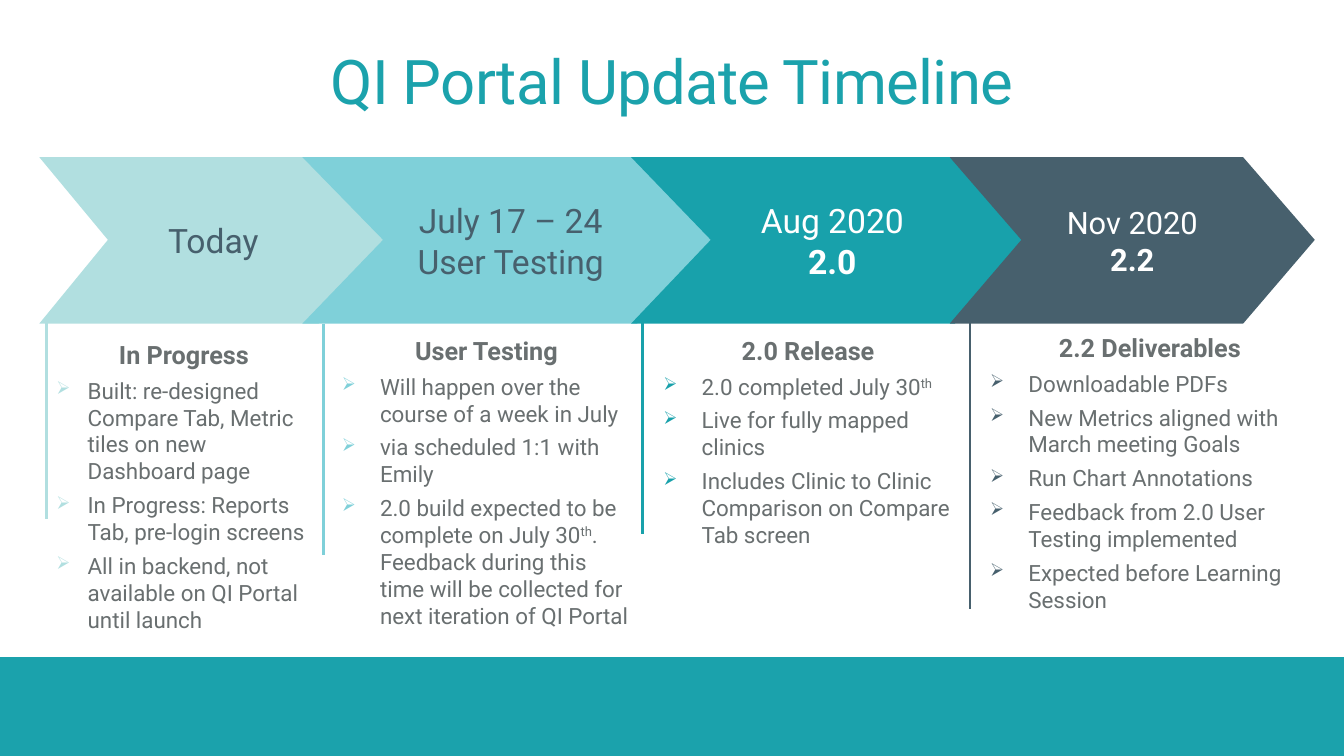
from lxml import etree
from pptx import Presentation
from pptx.dml.color import RGBColor
from pptx.enum.shapes import MSO_CONNECTOR, MSO_SHAPE
from pptx.enum.text import MSO_ANCHOR as ANCHOR, MSO_AUTO_SIZE as AUTO, PP_ALIGN as ALIGN
from pptx.oxml.ns import qn
from pptx.util import Inches, Pt

FONT = "Roboto"
COLORS = {
    "title": "1BA2AC", "body": "696F70", "white": "FFFFFF", "slate": "47606D",
    "mint": "B1DFE0", "aqua": "7FD0D9", "teal": "18A1AB",
}
TOP, MIDDLE, BOTTOM = 1.56, 2.38, 3.21  # arrow band

# Arrow: left, shoulder, tip, notch; rule: x, top, bottom; notes: left, top, width, height
# Text between ^ marks is superscript
STAGES = [
    {"color": "mint", "ink": "slate", "size": 24, "label": ["Today"],
     "arrow": (0.39, 3.16, 3.84, 1.07), "rule": (0.46, 3.18, 5.15),
     "box": (0.51, 3.32, 2.63, 3.41), "indent": 0.31, "head": "In Progress",
     "notes": ["Built: re-designed Compare Tab, Metric tiles on new Dashboard page",
               "In Progress: Reports Tab, pre-login screens",
               "All in backend, not available on QI Portal until launch"]},
    {"color": "aqua", "ink": "slate", "size": 24, "label": ["July 17 – 24", "User Testing"],
     "arrow": (3, 6.32, 7.13, 3.8), "rule": (3.21, 3.21, 5.51),
     "box": (3.34, 3.28, 2.97, 3.41), "indent": 0.38, "head": "User Testing",
     "notes": ["Will happen over the course of a week in July",
               "via scheduled 1:1 with Emily",
               "2.0 build expected to be complete on July 30^th^. Feedback during this "
               "time will be collected for next iteration of QI Portal"]},
    {"color": "teal", "ink": "white", "size": 24, "label": ["Aug 2020", "2.0"],
     "arrow": (6.26, 9.47, 10.25, 7.05), "rule": (6.37, 3.18, 5.3),
     "box": (6.53, 3.28, 2.97, 2.33), "indent": 0.38, "head": "2.0 Release",
     "notes": ["2.0 completed July 30^th^",
               "Live for fully mapped clinics",
               "Includes Clinic to Clinic Comparison on Compare Tab screen"]},
    {"color": "slate", "ink": "white", "size": 22, "label": ["Nov 2020", "2.2"],
     "arrow": (9.42, 12.33, 13.04, 10.13), "rule": (9.62, 3.18, 6.04),
     "box": (9.77, 3.25, 3.27, 3.62), "indent": 0.38, "head": "2.2 Deliverables",
     "notes": ["Downloadable PDFs",
               "New Metrics aligned with March meeting Goals",
               "Run Chart Annotations",
               "Feedback from 2.0 User Testing implemented",
               "Expected before Learning Session"]},
]


def add_run(p, text, size, color, bold=False):
    r = p.add_run()
    r.text = text
    r.font.name, r.font.size, r.font.bold = FONT, Pt(size), bold
    r.font.color.rgb = RGBColor.from_string(COLORS[color])
    return r


def fit_frame(tf):
    tf.word_wrap = True
    tf.auto_size = AUTO.SHAPE_TO_FIT_TEXT
    tf.vertical_anchor = ANCHOR.TOP
    tf.margin_left = tf.margin_right = tf.margin_top = tf.margin_bottom = Inches(0.05)


prs = Presentation()
prs.slide_width, prs.slide_height = Inches(13.33), Inches(7.5)
s = prs.slides.add_slide(prs.slide_layouts[5])

# Footer band
footer = s.shapes.add_shape(MSO_SHAPE.RECTANGLE, 0, Inches(6.52), prs.slide_width, Inches(0.98))
footer.shadow.inherit = False
footer.fill.solid()
footer.fill.fore_color.rgb = RGBColor.from_string(COLORS["title"])
footer.line.fill.background()

# Title
title = s.shapes.title
title.left, title.top, title.width, title.height = map(Inches, (2.57, 0.38, 8.19, 0.84))
fit_frame(title.text_frame)
p = title.text_frame.paragraphs[0]
p.alignment = ALIGN.CENTER
r = add_run(p, "QI Portal Update Timeline", 44, "title")
r._r.get_or_add_rPr().set("spc", "-50")

for stage in STAGES:
    color = RGBColor.from_string(COLORS[stage["color"]])

    # Arrow with its label
    left, shoulder, tip, notch = stage["arrow"]
    builder = s.shapes.build_freeform(Inches(left), Inches(TOP), scale=1.0)
    corners = [(shoulder, TOP), (tip, MIDDLE), (shoulder, BOTTOM), (left, BOTTOM), (notch, MIDDLE)]
    builder.add_line_segments([(Inches(x), Inches(y)) for x, y in corners], close=True)
    sp = builder.convert_to_shape()
    sp.shadow.inherit = False
    sp.fill.solid()
    sp.fill.fore_color.rgb = color
    sp.line.fill.background()
    tf = sp.text_frame
    tf.word_wrap = True
    tf.vertical_anchor = ANCHOR.MIDDLE
    for i, text in enumerate(stage["label"]):
        p = tf.add_paragraph() if i else tf.paragraphs[0]
        p.alignment = ALIGN.CENTER
        add_run(p, text, stage["size"], stage["ink"], bold=text.startswith("2."))

    # Vertical rule
    x, y1, y2 = map(Inches, stage["rule"])
    rule = s.shapes.add_connector(MSO_CONNECTOR.STRAIGHT, x, y1, x, y2)
    rule.line.color.rgb = color
    rule.line.width = Pt(2)
    etree.SubElement(rule._element.spPr, qn("a:effectLst"))

    # Heading and bulleted notes
    tf = s.shapes.add_textbox(*map(Inches, stage["box"])).text_frame
    fit_frame(tf)
    p = tf.paragraphs[0]
    p.alignment = ALIGN.CENTER
    p.space_after = Pt(5)
    add_run(p, stage["head"], 18, "body", bold=True)
    for note in stage["notes"]:
        p = tf.add_paragraph()
        p.space_after = Pt(5)
        pPr = p._p.get_or_add_pPr()
        pPr.set("marL", str(Inches(stage["indent"])))
        pPr.set("indent", str(-Inches(stage["indent"])))
        bullet_color = etree.SubElement(pPr, qn("a:buClr"))
        etree.SubElement(bullet_color, qn("a:srgbClr"), val=COLORS[stage["color"]])
        etree.SubElement(pPr, qn("a:buSzPct"), val="80000")
        etree.SubElement(pPr, qn("a:buChar"), char="➢")
        for i, part in enumerate(note.split("^")):
            if part:
                r = add_run(p, part, 16, "body")
                if i % 2:
                    r._r.get_or_add_rPr().set("baseline", "30000")

prs.save("out.pptx")
